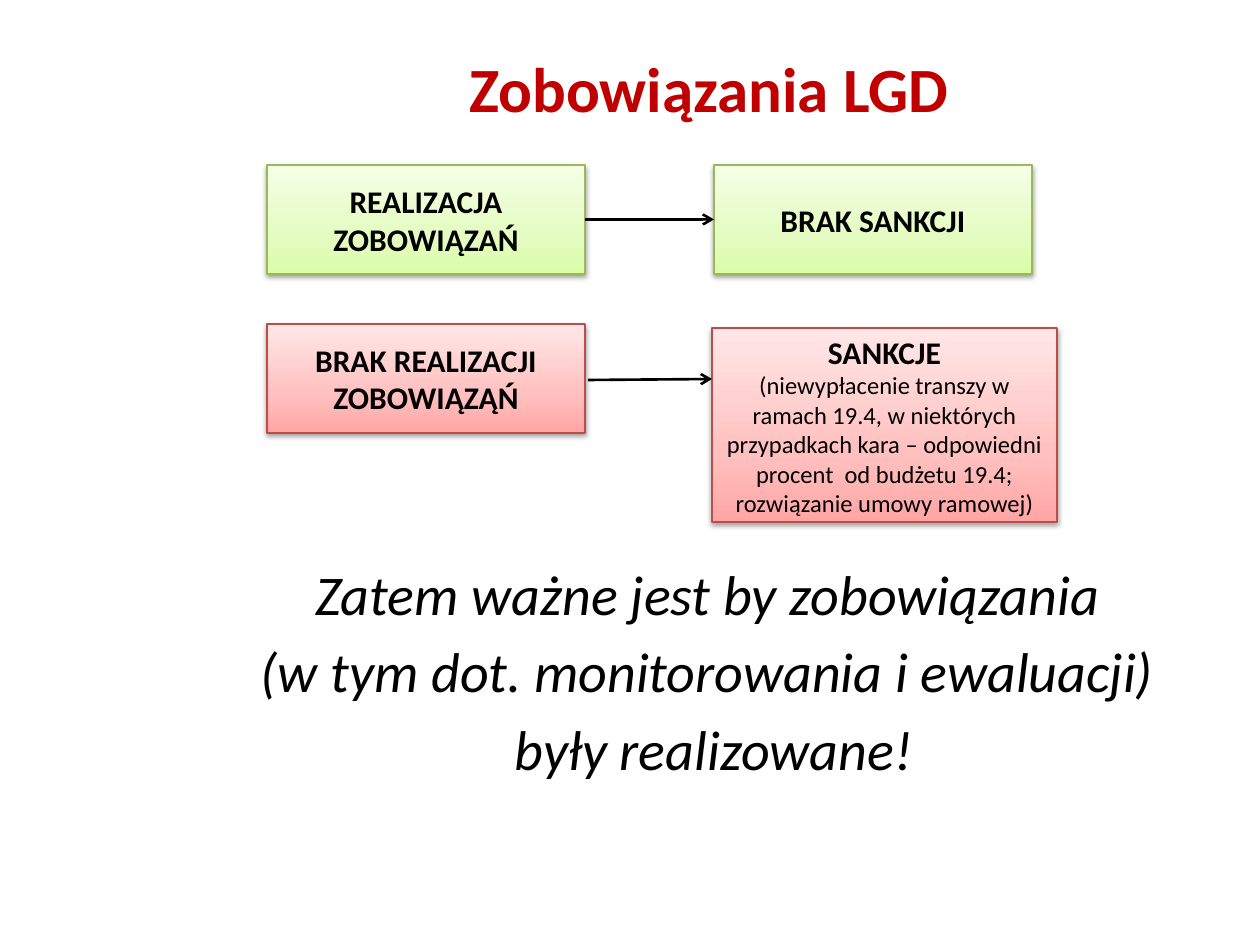
"""Build the slide on LGD obligations and their sanctions."""
import copy

import pptx
import pptx.dml.color
import pptx.enum.shapes
import pptx.enum.text
import pptx.oxml
import pptx.oxml.ns
import pptx.util

RGB = pptx.dml.color.RGBColor
BLACK = RGB(0x00, 0x00, 0x00)
TITLE = RGB(0xC0, 0x00, 0x00)
GREEN = {
    "line": RGB(0x98, 0xB9, 0x55),
    "stops": [RGB(0xDA, 0xFD, 0xA7), RGB(0xE4, 0xFC, 0xC2), RGB(0xF5, 0xFF, 0xE7)],
}
RED = {
    "line": RGB(0xBF, 0x4C, 0x48),
    "stops": [RGB(0xFF, 0xA6, 0xA5), RGB(0xFF, 0xC0, 0xBF), RGB(0xFF, 0xE7, 0xE7)],
}
PLACES = [0, 0.35, 1]
HEAD = {"size": 18, "bold": True}
NOTE = {"size": 14, "bold": False}
CLOSE = {"size": 32, "italic": True}
MIDDLE = pptx.enum.text.MSO_ANCHOR.MIDDLE
SHADOW = (
    '<a:outerShdw %s blurRad="40000" dist="20000" dir="5400000" rotWithShape="0">'
    '<a:srgbClr val="000000"><a:alpha val="38000"/></a:srgbClr></a:outerShdw>'
    % pptx.oxml.ns.nsdecls("a")
)


def px(count):
    return pptx.util.Emu(round(count * 914400 / 126))


def write(frame, lines, gap=0, color=BLACK):
    frame.word_wrap = True
    for index, (text, style) in enumerate(lines):
        para = frame.add_paragraph() if index else frame.paragraphs[0]
        para.alignment = pptx.enum.text.PP_ALIGN.CENTER
        para.space_before = pptx.util.Pt(gap if index else 0)
        run = para.add_run()
        run.text = text
        run.font.color.rgb = color
        values = {**style, "name": "Calibri", "size": pptx.util.Pt(style["size"])}
        for name, value in values.items():
            setattr(run.font, name, value)


def shade(shape, colors):
    fill = shape.fill
    fill.gradient()
    fill.gradient_angle = 90
    stops = shape._element.spPr.find(".//" + pptx.oxml.ns.qn("a:gsLst"))
    stops.append(copy.deepcopy(stops[-1]))
    for stop, place, color in zip(fill.gradient_stops, PLACES, colors):
        stop.position = place
        stop.color.rgb = color


def add_box(slide, area, theme, lines):
    kind = pptx.enum.shapes.MSO_SHAPE.RECTANGLE
    box = slide.shapes.add_shape(kind, *map(px, area))
    shade(box, theme["stops"])
    box.line.color.rgb = theme["line"]
    box.line.width = pptx.util.Pt(0.75)
    box.shadow.inherit = False
    effects = box._element.spPr.find(pptx.oxml.ns.qn("a:effectLst"))
    effects.append(pptx.oxml.parse_xml(SHADOW))
    box.text_frame.vertical_anchor = MIDDLE
    write(box.text_frame, lines)
    return box


def add_arrow(slide, ends):
    kind = pptx.enum.shapes.MSO_CONNECTOR.STRAIGHT
    arrow = slide.shapes.add_connector(kind, *map(px, ends))
    arrow.line.color.rgb = BLACK
    arrow.line.width = pptx.util.Pt(1.5)
    tip = arrow.line._get_or_add_ln()
    tip.append(tip.makeelement(pptx.oxml.ns.qn("a:tailEnd"), {"type": "arrow"}))
    props = arrow._element.spPr
    props.append(props.makeelement(pptx.oxml.ns.qn("a:effectLst"), {}))
    return arrow


def add_title(slide, area, text):
    title = slide.shapes.title
    for name, value in zip(("left", "top", "width", "height"), area):
        setattr(title, name, px(value))
    title.text_frame.vertical_anchor = MIDDLE
    write(title.text_frame, [(text, {"size": 36, "bold": True})], color=TITLE)


def add_text(slide, area, lines, gap):
    box = slide.shapes.add_textbox(*map(px, area))
    write(box.text_frame, lines, gap)


def main():
    deck = pptx.Presentation()
    deck.slide_width, deck.slide_height = px(1260), px(945)
    slide = deck.slides.add_slide(deck.slide_layouts[5])
    add_title(slide, (168, 10, 1082, 155), "Zobowiązania LGD")
    add_text(slide, (185, 553, 1058, 265), [
        ("Zatem ważne jest by zobowiązania ", CLOSE),
        ("(w tym dot. monitorowania i ewaluacji) ", CLOSE),
        ("były realizowane!", CLOSE),
    ], gap=6)
    done = add_box(slide, (267, 165, 318, 109), GREEN,
                   [("REALIZACJA ZOBOWIĄZAŃ", HEAD)])
    free = add_box(slide, (714, 165, 318, 109), GREEN, [("BRAK SANKCJI", HEAD)])
    add_box(slide, (267, 324, 318, 109), RED, [("BRAK REALIZACJI ZOBOWIĄZĄŃ", HEAD)])
    add_box(slide, (712, 328, 345, 194), RED, [
        ("SANKCJE", HEAD),
        ("(niewypłacenie transzy w ramach 19.4, w niektórych przypadkach kara – "
         "odpowiedni procent  od budżetu 19.4; rozwiązanie umowy ramowej)", NOTE),
    ])
    link = add_arrow(slide, (585, 219, 714, 219))
    link.begin_connect(done, 3)
    link.end_connect(free, 1)
    add_arrow(slide, (588, 380, 712, 379))
    deck.save("out.pptx")


if __name__ == "__main__":
    main()
